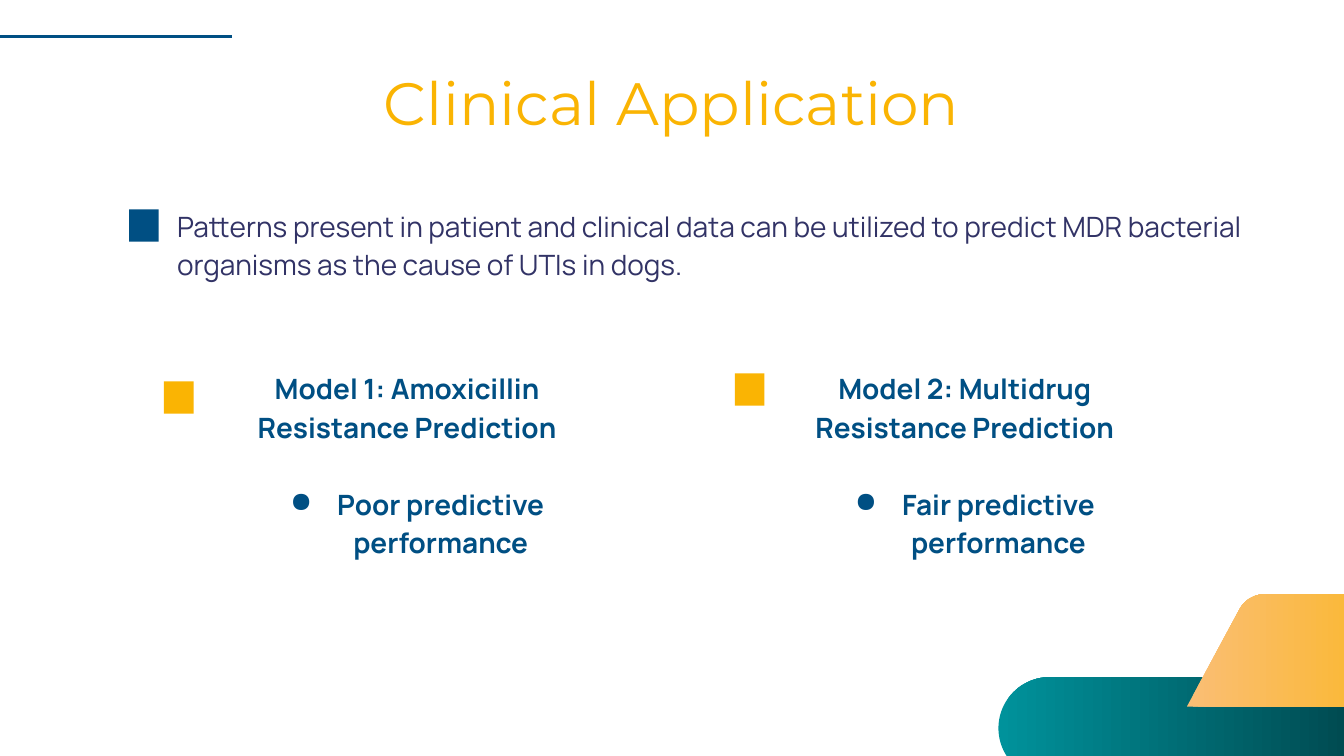
from copy import deepcopy
from dataclasses import dataclass

from lxml import etree
from pptx import Presentation
from pptx.dml.color import RGBColor
from pptx.enum.shapes import MSO_CONNECTOR, MSO_SHAPE
from pptx.enum.text import MSO_ANCHOR, MSO_AUTO_SIZE, PP_ALIGN
from pptx.oxml.ns import qn
from pptx.util import Cm, Pt

STRAIGHT = MSO_CONNECTOR.STRAIGHT
RECTANGLE = MSO_SHAPE.RECTANGLE
ROUNDED = MSO_SHAPE.ROUNDED_RECTANGLE
TOP = MSO_ANCHOR.TOP
NO_AUTOFIT = MSO_AUTO_SIZE.NONE
LEFT = PP_ALIGN.LEFT
CENTER = PP_ALIGN.CENTER

BLUE = RGBColor(0x00, 0x4F, 0x83)
YELLOW = RGBColor(0xFA, 0xB4, 0x03)
AMBER = RGBColor(0xFA, 0xB9, 0x3C)
PEACH = RGBColor(0xFA, 0xBE, 0x75)
INDIGO = RGBColor(0x32, 0x33, 0x66)
TEAL = RGBColor(0x00, 0x92, 0x9B)
DARK_TEAL = RGBColor(0x00, 0x37, 0x3D)

TITLE_FONT = "Montserrat"
BODY_FONT = "Manrope"
BODY_SIZE = Pt(15)
LINE_SPACING = 1.15
PADDING = Cm(0.25)


@dataclass(frozen=True)
class Marker:
    left: float
    top: float
    color: RGBColor


@dataclass(frozen=True)
class Model:
    left: float
    height: float
    heading: str
    finding: str


MARKERS = [
    Marker(2.44, 3.96, BLUE),
    Marker(3.1, 7.21, YELLOW),
    Marker(13.89, 7.06, YELLOW),
]
MODELS = [
    Model(3.91, 4.06, "Model 1: Amoxicillin Resistance Prediction",
          "Poor predictive performance"),
    Model(14.45, 4.47, "Model 2: Multidrug Resistance Prediction",
          "Fair predictive performance"),
]


def fill_gradient(shape, stops: list[tuple[float, RGBColor]]) -> None:
    shape.shadow.inherit = False
    shape.line.fill.background()
    shape.fill.gradient()
    shape.fill.gradient_angle = 0
    stop_list = shape.fill._fill._gradFill.find(qn("a:gsLst"))
    for _ in range(len(stops) - len(stop_list)):
        stop_list.append(deepcopy(stop_list[-1]))
    for stop, (position, color) in zip(shape.fill.gradient_stops, stops):
        stop.position = position
        stop.color.rgb = color


def curve_points(controls: list[tuple[float, float]], steps: int = 12) -> list[tuple[int, int]]:
    points = []
    for step in range(1, steps + 1):
        t = step / steps
        weights = ((1 - t) ** 3, 3 * t * (1 - t) ** 2, 3 * t ** 2 * (1 - t), t ** 3)
        x, y = (sum(w * c[axis] for w, c in zip(weights, controls)) for axis in (0, 1))
        points.append((Cm(x), Cm(y)))
    return points


def draw_corner(page) -> None:
    pill = page.shapes.add_shape(ROUNDED, Cm(18.87), Cm(12.8), Cm(8.36), Cm(1.93))
    pill.adjustments[0] = 0.5
    fill_gradient(pill, [(0, TEAL), (1, DARK_TEAL)])

    builder = page.shapes.build_freeform(Cm(23.42), Cm(11.53))
    corners = [(22.43, 13.36), (25.81, 13.36), (26.95, 11.23), (23.93, 11.23)]
    bend = [corners[-1], (23.72, 11.23), (23.52, 11.33), (23.42, 11.53)]
    builder.add_line_segments([(Cm(x), Cm(y)) for x, y in corners] + curve_points(bend))
    fill_gradient(builder.convert_to_shape(), [(0, PEACH), (0.66, AMBER), (1, YELLOW)])


def draw_top_rule(page) -> None:
    rule = page.shapes.add_connector(STRAIGHT, 0, Cm(0.69), Cm(4.39), Cm(0.69))
    rule.line.color.rgb = BLUE
    rule.line.width = Pt(1.5)
    etree.SubElement(rule._element.spPr, qn("a:effectLst"))


def prepare_frame(box):
    frame = box.text_frame
    frame.word_wrap = True
    frame.auto_size = NO_AUTOFIT
    frame.vertical_anchor = TOP
    frame.margin_left = frame.margin_right = PADDING
    frame.margin_top = frame.margin_bottom = PADDING
    return frame


def style_paragraph(para, text: str, color: RGBColor, align=LEFT, bold: bool = False) -> None:
    para.text = text
    para.alignment = align
    para.line_spacing = LINE_SPACING
    para.font.name = BODY_FONT
    para.font.size = BODY_SIZE
    para.font.bold = bold
    para.font.color.rgb = color


def add_bullet(para, color: RGBColor) -> None:
    properties = para._p.get_or_add_pPr()
    properties.set("marL", str(Cm(1.27)))
    properties.set("indent", str(-Cm(0.89)))
    bullet_color = etree.Element(qn("a:buClr"))
    etree.SubElement(bullet_color, qn("a:srgbClr"), val=str(color))
    bullet = etree.Element(qn("a:buChar"), char="●")
    defaults = properties.find(qn("a:defRPr"))
    defaults.addprevious(bullet_color)
    defaults.addprevious(bullet)


def draw_title(page) -> None:
    title = page.shapes.title
    title.left, title.top, title.width, title.height = Cm(1.98), Cm(0.99), Cm(21.44), Cm(1.6)
    para = prepare_frame(title).paragraphs[0]
    para.text = "Clinical Application"
    para.alignment = CENTER
    para.font.name = TITLE_FONT
    para.font.size = Pt(32)
    para.font.color.rgb = YELLOW


def draw_summary(page) -> None:
    box = page.shapes.add_textbox(Cm(3.1), Cm(3.61), Cm(21.44), Cm(2.29))
    style_paragraph(
        prepare_frame(box).paragraphs[0],
        "Patterns present in patient and clinical data can be utilized to predict "
        "MDR bacterial organisms as the cause of UTIs in dogs.",
        INDIGO,
    )


def draw_marker(page, marker: Marker) -> None:
    square = page.shapes.add_shape(
        RECTANGLE, Cm(marker.left), Cm(marker.top), Cm(0.56), Cm(0.61))
    square.shadow.inherit = False
    square.fill.solid()
    square.fill.fore_color.rgb = marker.color
    square.line.fill.background()


def draw_model(page, model: Model) -> None:
    box = page.shapes.add_textbox(Cm(model.left), Cm(6.68), Cm(7.57), Cm(model.height))
    frame = prepare_frame(box)
    style_paragraph(frame.paragraphs[0], model.heading, BLUE, CENTER, True)
    finding = frame.add_paragraph()
    style_paragraph(finding, model.finding, BLUE, CENTER, True)
    finding.space_before = Pt(20.6)
    add_bullet(finding, BLUE)


def main() -> None:
    deck = Presentation()
    deck.slide_width, deck.slide_height = Cm(25.4), Cm(14.29)
    page = deck.slides.add_slide(deck.slide_layouts[5])
    draw_corner(page)
    draw_top_rule(page)
    draw_title(page)
    draw_summary(page)
    for marker in MARKERS:
        draw_marker(page, marker)
    for model in MODELS:
        draw_model(page, model)
    deck.save("out.pptx")


if __name__ == "__main__":
    main()
